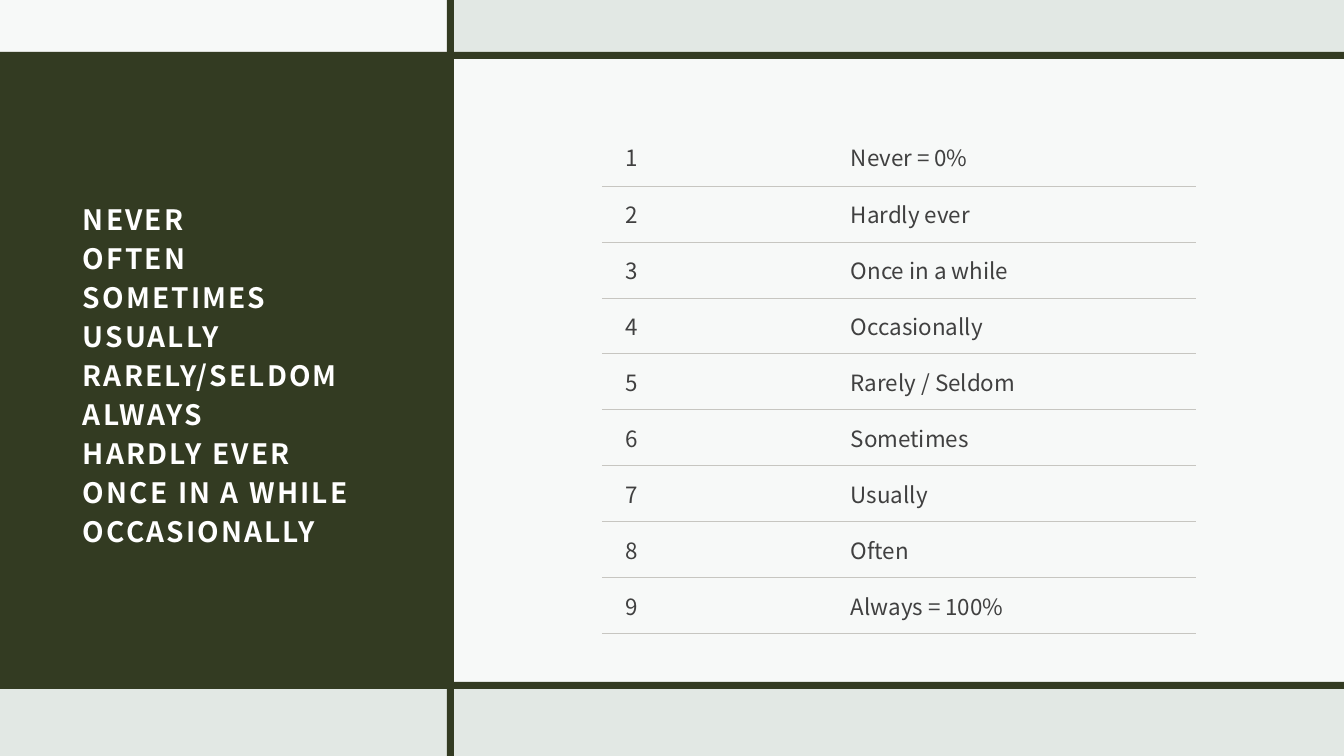
import dataclasses
import lxml.etree
import pptx
import pptx.dml.color
import pptx.enum.shapes
import pptx.enum.text
import pptx.oxml.ns
import pptx.util

RGB = pptx.dml.color.RGBColor
OLIVE = RGB(0x33, 0x3B, 0x22)
MIST = RGB(0xE2, 0xE8, 0xE4)
WHITE = RGB(0xFF, 0xFF, 0xFF)
INK = RGB(0x40, 0x40, 0x40)
RULE = RGB(0xC7, 0xC6, 0xC1)
FONT = "Noto Sans CJK JP"
PLAIN = "{2D5ABB26-0587-4C30-8999-92F81FD0307C}"
WIDE, HIGH, BAR = 1344, 756, 7
SPLIT, TOP, BASE = 447, 52, 682
HEAD, ROW = 58, 56

WORDS = ["NEVER", "OFTEN", "SOMETIMES", "USUALLY", "RARELY/SELDOM",
         "ALWAYS", "HARDLY EVER", "ONCE IN A WHILE", "OCCASIONALLY"]
SCALE = ["Never = 0%", "Hardly ever", "Once in a while", "Occasionally",
         "Rarely / Seldom", "Sometimes", "Usually", "Often", "Always = 100%"]


@dataclasses.dataclass
class Block:
    left: int
    top: int
    width: int
    height: int
    color: RGB
    alpha: int = 100


BLOCKS = [
    Block(0, TOP, SPLIT, BASE - TOP, OLIVE),
    Block(0, 0, SPLIT, TOP + 3, WHITE, 75),
    Block(SPLIT + BAR, TOP + BAR, WIDE - SPLIT - BAR, BASE - TOP - 3, WHITE, 75),
    Block(0, BASE, WIDE, BAR, OLIVE),
    Block(SPLIT, 0, BAR, HIGH, OLIVE),
    Block(0, TOP, WIDE, BAR, OLIVE),
]


def px(count: int) -> pptx.util.Emu:
    return pptx.util.Emu(round(count * 914400 / 100.8))


def style(run, size: int, color: RGB, bold: bool = False) -> None:
    run.font.name = FONT
    run.font.size = pptx.util.Pt(size)
    run.font.bold = bold
    run.font.color.rgb = color


def draw_block(slide, block: Block) -> None:
    shape = slide.shapes.add_shape(
        pptx.enum.shapes.MSO_SHAPE.RECTANGLE,
        px(block.left), px(block.top), px(block.width), px(block.height))
    shape.shadow.inherit = False
    shape.fill.solid()
    shape.fill.fore_color.rgb = block.color
    shape.line.fill.background()
    if block.alpha < 100:
        tint = next(shape._element.spPr.iter(pptx.oxml.ns.qn("a:srgbClr")))
        alpha = lxml.etree.SubElement(tint, pptx.oxml.ns.qn("a:alpha"))
        alpha.set("val", str(block.alpha * 1000))


def draw_title(slide) -> None:
    title = slide.shapes.title
    slide.shapes._spTree.append(title._element)
    title.left, title.top = px(71), px(134)
    title.width, title.height = px(344), px(475)
    frame = title.text_frame
    frame.word_wrap = True
    frame.auto_size = pptx.enum.text.MSO_AUTO_SIZE.NONE
    frame.vertical_anchor = pptx.enum.text.MSO_ANCHOR.MIDDLE
    frame.margin_left = frame.margin_right = frame.margin_top = px(12)
    frame.margin_bottom = px(10)
    lines = frame.paragraphs[0]
    lines.text = "\n".join(WORDS)
    lines.alignment = pptx.enum.text.PP_ALIGN.LEFT
    lines.line_spacing = 1.16
    for run in lines.runs:
        style(run, 20, WHITE, True)
        run.font._element.set("spc", "150")


def rule_under(cell) -> None:
    props = cell._tc.get_or_add_tcPr()
    line = lxml.etree.Element(pptx.oxml.ns.qn("a:lnB"), w=str(pptx.util.Pt(0.75)))
    fill = lxml.etree.SubElement(line, pptx.oxml.ns.qn("a:solidFill"))
    lxml.etree.SubElement(fill, pptx.oxml.ns.qn("a:srgbClr"), val=str(RULE))
    props.insert(0, line)


def fill_cell(cell, text: str) -> None:
    cell.text_frame.text = text
    style(cell.text_frame.paragraphs[0].runs[0], 16, INK)
    cell.margin_left, cell.margin_right = px(24), px(18)
    cell.margin_top = cell.margin_bottom = px(11)
    cell.vertical_anchor = pptx.enum.text.MSO_ANCHOR.MIDDLE
    cell.fill.background()
    rule_under(cell)


def draw_table(slide) -> None:
    widths = [225, 369]
    height = HEAD + ROW * (len(SCALE) - 1)
    table = slide.shapes.add_table(len(SCALE), len(widths), px(602), px(128),
                                   px(sum(widths)), px(height)).table
    table.first_row = table.horz_banding = False
    next(table._tbl.iter(pptx.oxml.ns.qn("a:tableStyleId"))).text = PLAIN
    for column, width in zip(table.columns, widths):
        column.width = px(width)
    for index, text in enumerate(SCALE):
        table.rows[index].height = px(ROW if index else HEAD)
        fill_cell(table.cell(index, 0), str(index + 1))
        fill_cell(table.cell(index, 1), text)


def main() -> None:
    deck = pptx.Presentation()
    deck.slide_width, deck.slide_height = px(WIDE), px(HIGH)
    slide = deck.slides.add_slide(deck.slide_layouts[5])
    slide.background.fill.solid()
    slide.background.fill.fore_color.rgb = MIST
    for block in BLOCKS:
        draw_block(slide, block)
    draw_title(slide)
    draw_table(slide)
    deck.save("out.pptx")


if __name__ == "__main__":
    main()
